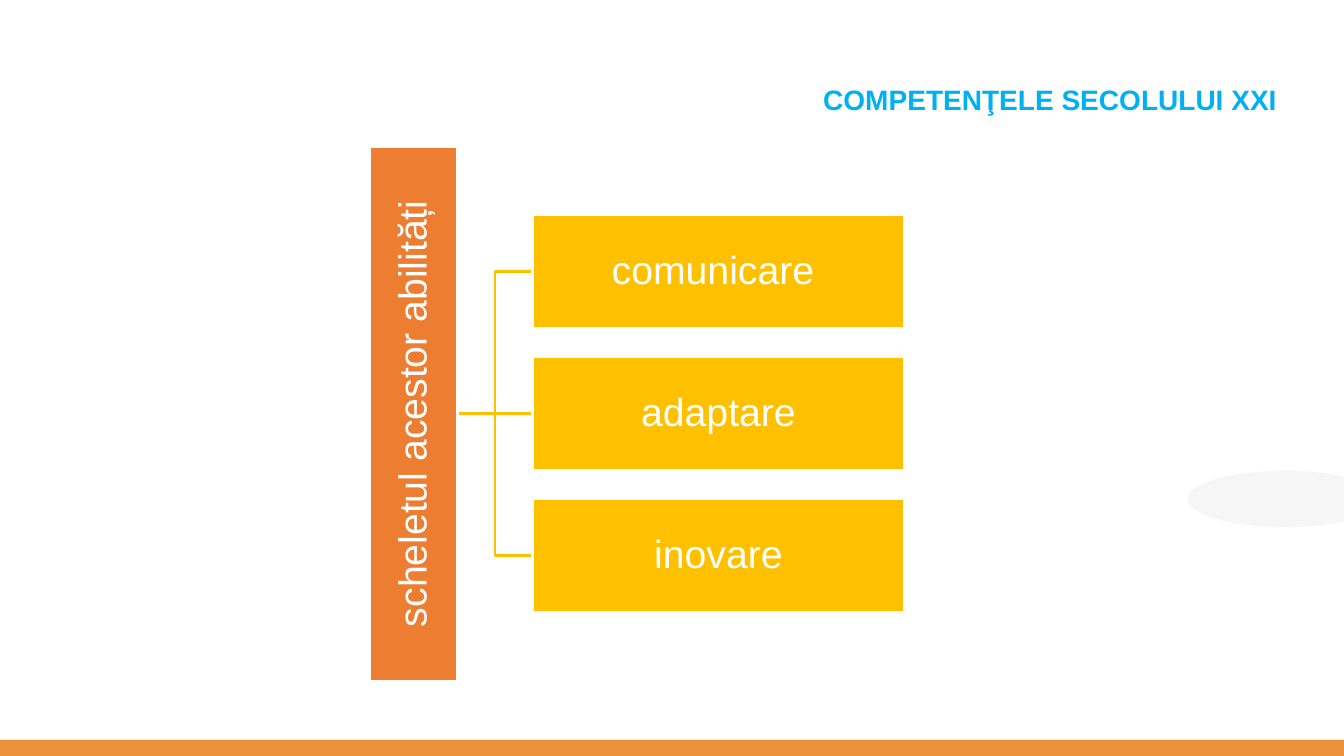
from lxml.etree import SubElement
from pptx import Presentation
from pptx.dml.color import RGBColor
from pptx.enum.shapes import MSO_CONNECTOR, MSO_SHAPE
from pptx.enum.text import MSO_ANCHOR, PP_ALIGN
from pptx.oxml.ns import qn
from pptx.util import Inches, Pt

WIDTH, HEIGHT = 13.33, 7.5
ORANGE, YELLOW, WHITE = "ED7D31", "FFC000", "FFFFFF"
SKILLS = ["comunicare ", "adaptare", "inovare"]


def color(value):
    return RGBColor.from_string(value)


def add_block(s, kind, box, fill, line=None):
    sp = s.shapes.add_shape(kind, *map(Inches, box))
    sp.shadow.inherit = False
    sp.fill.solid()
    sp.fill.fore_color.rgb = color(fill)
    if line:
        sp.line.color.rgb = color(line)
        sp.line.width = Pt(2)
    else:
        sp.line.fill.background()
    return sp


def write(sp, text, size, hue, align, bold=False):
    tf = sp.text_frame
    tf.word_wrap = True
    p = tf.paragraphs[0]
    p.text = text
    p.alignment = align
    p.line_spacing = 0.9
    p.font.name, p.font.size, p.font.bold = "Arial", Pt(size), bold
    p.font.color.rgb = color(hue)
    return tf


def add_label(s, box, text, fill):
    sp = add_block(s, MSO_SHAPE.RECTANGLE, box, fill, WHITE)
    tf = write(sp, text, 28, WHITE, PP_ALIGN.CENTER)
    tf.vertical_anchor = MSO_ANCHOR.MIDDLE
    tf.margin_left = tf.margin_right = tf.margin_top = tf.margin_bottom = Inches(0.02)
    return sp


def add_branch(s, x1, y1, x2, y2):
    kind = MSO_CONNECTOR.STRAIGHT if y1 == y2 else MSO_CONNECTOR.ELBOW
    line = s.shapes.add_connector(kind, *map(Inches, (x1, y1, x2, y2)))
    line.line.color.rgb = color(YELLOW)
    line.line.width = Pt(2)
    SubElement(line._element.spPr, qn("a:effectLst"))


def add_background(s):
    oval = add_block(s, MSO_SHAPE.OVAL, (11.78, 4.67, 1.92, 0.56), "F5F5F5")
    tint = oval._element.spPr.find(qn("a:solidFill"))[0]
    SubElement(tint, qn("a:alpha"), val="89000")
    add_block(s, MSO_SHAPE.RECTANGLE, (0, HEIGHT - 0.16, WIDTH, 0.16), "EA9139")


def add_title(s, box, text):
    sp = s.shapes.add_textbox(*map(Inches, box))
    write(sp, text, 20, "00B0F0", PP_ALIGN.RIGHT, bold=True)


def add_hierarchy(s, box, root, items):
    left, top, width, height = box
    root_w, item_w, item_h, pitch = 0.87, 3.69, 1.13, 1.41
    middle = top + height / 2
    root_right, item_left = left + root_w, left + width - item_w
    centers = [middle + (i - (len(items) - 1) / 2) * pitch for i in range(len(items))]

    # Branches behind the boxes
    for y in centers:
        add_branch(s, root_right, middle, item_left, y)

    # Root, turned to read upwards
    root_box = (left + (root_w - height) / 2, middle - root_w / 2, height, root_w)
    add_label(s, root_box, root, ORANGE).rotation = 270

    # One box per skill
    for y, text in zip(centers, items):
        add_label(s, (item_left, y - item_h / 2, item_w, item_h), text, YELLOW)


def main():
    prs = Presentation()
    prs.slide_width, prs.slide_height = Inches(WIDTH), Inches(HEIGHT)
    s = prs.slides.add_slide(prs.slide_layouts[6])
    add_background(s)
    add_title(s, (3.34, 0.81, 9.5, 0.92), "COMPETENŢELE SECOLULUI XXI ")
    add_hierarchy(s, (3.67, 1.45, 5.3, 5.31), "scheletul acestor abilități", SKILLS)
    prs.save("out.pptx")


if __name__ == "__main__":
    main()
